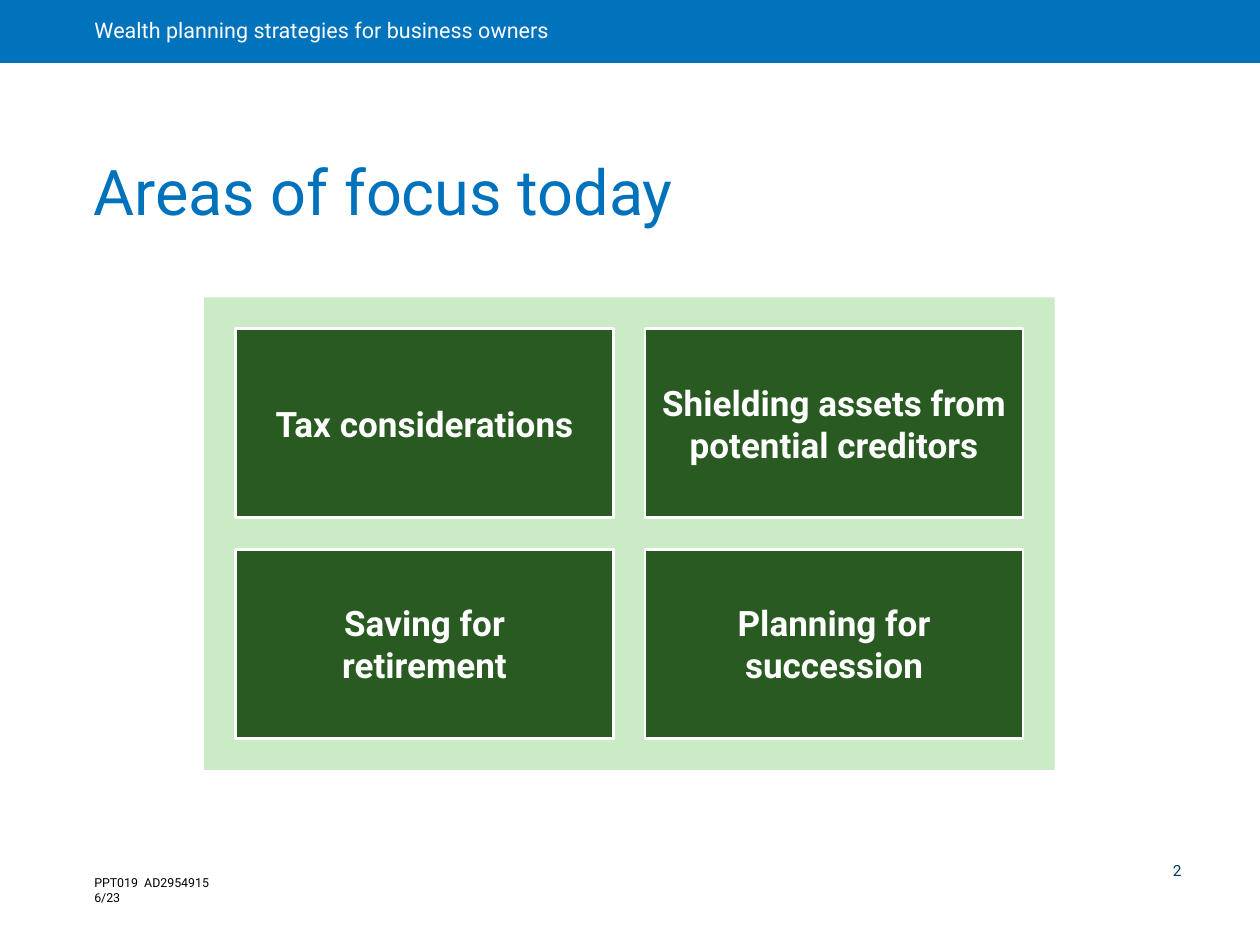
from pptx import Presentation
from pptx.dml.color import RGBColor
from pptx.enum.shapes import MSO_SHAPE
from pptx.enum.text import MSO_ANCHOR as ANCHOR, PP_ALIGN as ALIGN
from pptx.util import Inches, Pt

FONT = "Roboto"
BLUE, NAVY, WHITE, BLACK = "0073BC", "003463", "FFFFFF", "000000"
TITLE_BLUE, PALE_GREEN, DARK_GREEN = "0072BC", "CBEAC6", "285A21"

BANNER = "Wealth planning strategies for business owners"
TITLE = "Areas of focus today"
FOCUS_AREAS = [
    ["Tax considerations", "Shielding assets from potential creditors"],
    ["Saving for\nretirement", "Planning for succession"],
]
FOOTER = "PPT019  AD2954915\n6/23"
PAGE_NUMBER = "2"

PANEL_LEFT, PANEL_TOP = 1.62, 2.36
CARD_W, CARD_H, GAP = 3, 1.5, 0.25


def rgb(color):
    return RGBColor.from_string(color)


def write(sp, text, size, color, insets, anchor=ANCHOR.TOP, align=ALIGN.LEFT,
          bold=False, spacing=None, wrap=True):
    """Fill a shape with one paragraph; a newline becomes a line break."""
    tf = sp.text_frame
    tf.word_wrap = wrap
    tf.vertical_anchor = anchor
    (tf.margin_left, tf.margin_top,
     tf.margin_right, tf.margin_bottom) = map(Inches, insets)
    p = tf.paragraphs[0]
    p.alignment = align
    p.line_spacing = spacing
    for i, line in enumerate(text.split("\n")):
        if i:
            p.add_line_break()
        r = p.add_run()
        r.text = line
        r.font.name = FONT
        r.font.size = Pt(size)
        r.font.bold = bold
        r.font.color.rgb = rgb(color)


def add_rect(slide, box, fill, line=None):
    sp = slide.shapes.add_shape(MSO_SHAPE.RECTANGLE, *map(Inches, box))
    sp.shadow.inherit = False
    sp.fill.solid()
    sp.fill.fore_color.rgb = rgb(fill)
    if line:
        sp.line.color.rgb = rgb(line)
        sp.line.width = Pt(1.5)
    else:
        sp.line.fill.background()
    return sp


def add_text(slide, box, *args, **kwargs):
    write(slide.shapes.add_textbox(*map(Inches, box)), *args, **kwargs)


def add_focus_grid(slide):
    rows, cols = len(FOCUS_AREAS), len(FOCUS_AREAS[0])
    step_x, step_y = CARD_W + GAP, CARD_H + GAP
    add_rect(slide, (PANEL_LEFT, PANEL_TOP, cols * step_x + GAP,
                     rows * step_y + GAP), PALE_GREEN)
    for row, areas in enumerate(FOCUS_AREAS):
        for col, area in enumerate(areas):
            card = add_rect(slide, (PANEL_LEFT + GAP + col * step_x,
                                    PANEL_TOP + GAP + row * step_y,
                                    CARD_W, CARD_H), DARK_GREEN, WHITE)
            write(card, area, 20, WHITE, (0.1, 0.05, 0.1, 0.05),
                  ANCHOR.MIDDLE, ALIGN.CENTER, bold=True)


def main():
    prs = Presentation()
    prs.slide_width, prs.slide_height = Inches(10), Inches(7.5)
    slide = prs.slides.add_slide(prs.slide_layouts[6])

    banner = add_rect(slide, (0, 0, 10, 0.5), BLUE)
    write(banner, BANNER, 12.3, WHITE, (0.75, 0, 0.22, 0), ANCHOR.MIDDLE,
          spacing=0.9)
    add_text(slide, (0.63, 1.18, 8.62, 0.7), TITLE, 36, TITLE_BLUE,
             (0.11, 0.06, 0.11, 0.06), ANCHOR.BOTTOM, spacing=0.9)
    add_focus_grid(slide)
    add_text(slide, (0.65, 6.9, 1.2, 0.34), FOOTER, 7.1, BLACK,
             (0.1, 0.05, 0.1, 0.05), wrap=False)
    add_text(slide, (9.31, 6.81, 0.56, 0.22), PAGE_NUMBER, 8.8, NAVY,
             (0, 0.04, 0.04, 0.04), spacing=0.9)

    prs.save("out.pptx")


if __name__ == "__main__":
    main()
